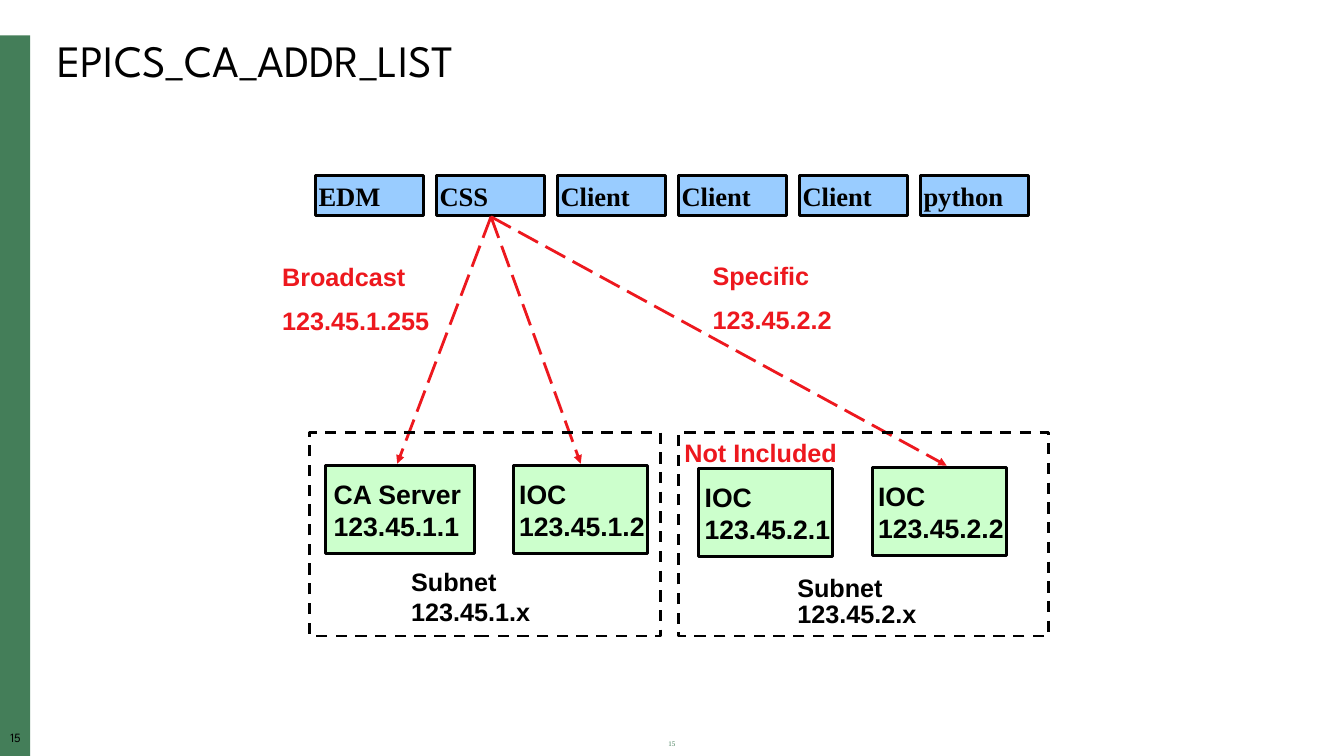
"""Build the EPICS_CA_ADDR_LIST slide with clients, subnets and address routes."""
import pptx
import pptx.util
import pptx.dml.color
import pptx.enum.dml
import pptx.enum.shapes
import pptx.enum.text
from lxml import etree

Inches, Pt = pptx.util.Inches, pptx.util.Pt
Align, Anchor = pptx.enum.text.PP_ALIGN, pptx.enum.text.MSO_ANCHOR
Dash = pptx.enum.dml.MSO_LINE

TITLE = "EPICS_CA_ADDR_LIST"
PAGE = "15"
BLACK, RED, GREEN, BLUE, MINT = "000000", "ED181E", "447E59", "99CCFF", "CCFFCC"
SANS, SERIF, HEAD = "Arial", "Times New Roman", "League Spartan"

CLIENTS = ["EDM", "CSS", "Client", "Client", "Client", "python"]
HOSTS = [
    ((3.23, 4.62, 1.48, 0.87), ["CA Server", "123.45.1.1"], 0.08),
    ((6.93, 4.65, 1.33, 0.87), ["IOC", "123.45.2.1"], 0.06),
    ((5.09, 4.62, 1.33, 0.87), ["IOC", "123.45.1.2"], 0.06),
    ((8.65, 4.64, 1.33, 0.87), ["IOC", "123.45.2.2"], 0.06),
]
SOURCE = (4.87, 2.15)
TARGETS = [(3.94, 4.6), (5.76, 4.6), (9.39, 4.62)]
NETS = [(3.07, 4.29, 3.48, 2.02), (6.73, 4.29, 3.67, 2.02)]
LABELS = [
    ((7.81, 5.63, 1.47, 0.68), ["Subnet", "123.45.2.x"], BLACK, 10, 0.3),
    ((3.98, 5.57, 1.47, 0.7), ["Subnet", "123.45.1.x"], BLACK, 0, 1),
    ((6.97, 2.53, 1.83, 0.85), ["Specific", "123.45.2.2"], RED, 10, 1),
    ((2.7, 2.54, 1.83, 0.85), ["Broadcast", "123.45.1.255"], RED, 10, 1),
    ((6.69, 4.29, 1.83, 0.4), ["Not Included"], RED, 0, 1),
]


def paint(part, color):
    part.solid()
    part.fore_color.rgb = pptx.dml.color.RGBColor.from_string(color)


def write(frame, lines, face, size, color, bold=False, align=Align.LEFT,
          gap=0, pitch=1, inset=(0.1, 0.05), wrap=True, anchor=Anchor.TOP):
    frame.word_wrap = wrap
    frame.vertical_anchor = anchor
    frame.margin_left = frame.margin_right = Inches(inset[0])
    frame.margin_top = frame.margin_bottom = Inches(inset[1])
    for i, line in enumerate(lines):
        para = frame.add_paragraph() if i else frame.paragraphs[0]
        para.alignment = align
        if i:
            para.space_before = Pt(gap)
            para.line_spacing = pitch
        run = para.add_run()
        run.text = line
        run.font.name, run.font.size, run.font.bold = face, Pt(size), bold
        paint(run.font.fill, color)


def label(box, lines, *style, **more):
    shape = slide.shapes.add_textbox(*map(Inches, box))
    write(shape.text_frame, lines, *style, **more)


def block(box, fill=None, line=None, dash=None):
    kind = pptx.enum.shapes.MSO_SHAPE.RECTANGLE
    shape = slide.shapes.add_shape(kind, *map(Inches, box))
    shape.shadow.inherit = False
    if fill:
        paint(shape.fill, fill)
    else:
        shape.fill.background()
    if line:
        paint(shape.line.fill, line)
        shape.line.width = Pt(2)
        shape.line.dash_style = dash
    else:
        shape.line.fill.background()
    return shape


def arrow(start, end):
    kind = pptx.enum.shapes.MSO_CONNECTOR.STRAIGHT
    wire = slide.shapes.add_connector(kind, *map(Inches, start + end))
    paint(wire.line.fill, RED)
    wire.line.width = Pt(2)
    wire.line.dash_style = Dash.LONG_DASH
    props = wire.element.spPr
    space = "{" + props.nsmap["a"] + "}"
    tail = etree.SubElement(wire.line._get_or_add_ln(), space + "tailEnd")
    tail.set("type", "triangle")
    etree.SubElement(props, space + "effectLst")


deck = pptx.Presentation()
deck.slide_width, deck.slide_height = Inches(13.33), Inches(7.5)
slide = deck.slides.add_slide(deck.slide_layouts[5])

block((0, 0.35, 0.3, 7.15), GREEN)
label((0, 7.24, 0.31, 0.17), [PAGE], HEAD, 9, BLACK, align=Align.CENTER, inset=(0, 0))
label((5.08, 7.29, 3.17, 0.2), [PAGE], SERIF, 5, GREEN, align=Align.CENTER)

title = slide.shapes.title
title.left, title.top, title.width, title.height = map(Inches, (0.47, 0.3, 12.5, 0.59))
write(title.text_frame, [TITLE], HEAD, 32, BLACK, anchor=Anchor.MIDDLE)

for i, name in enumerate(CLIENTS):
    shape = block((3.13 + 1.2 * i, 1.74, 1.07, 0.4), BLUE, BLACK)
    write(shape.text_frame, [name], SERIF, 19, BLACK, True,
          inset=(0.03, 0.01), wrap=False, anchor=Anchor.MIDDLE)

for box, lines, side in HOSTS:
    shape = block(box, MINT, BLACK)
    write(shape.text_frame, lines, SANS, 19, BLACK, True,
          inset=(side, side / 2), wrap=False, anchor=Anchor.MIDDLE)

for target in TARGETS:
    arrow(SOURCE, target)

for box in NETS:
    block(box, line=BLACK, dash=Dash.DASH)

for box, lines, color, gap, pitch in LABELS:
    label(box, lines, SANS, 18, color, True, gap=gap, pitch=pitch)

deck.save("out.pptx")
